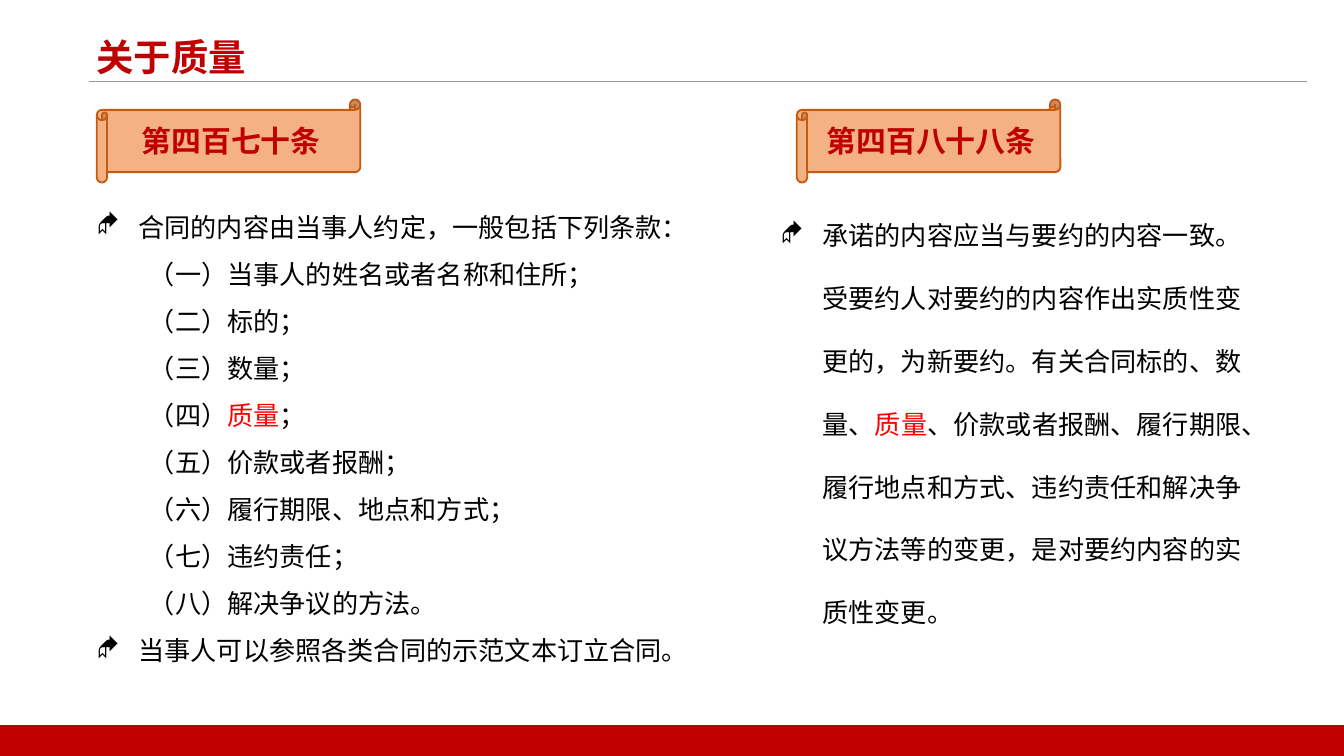
from lxml import etree
from pptx import Presentation
from pptx.dml.color import RGBColor
from pptx.enum import shapes, text
from pptx.oxml.ns import qn
from pptx.util import Cm, Pt

FONT = "Noto Sans CJK SC"
COLORS = {"bg": "FFFFFF", "rule": "999999", "brand": "C00000", "scroll": "F4B183",
          "scroll_line": "C55A11", "body": "000000", "key": "FF0000"}
TITLE = "关于质量"
KEYWORD = "质量"

# Articles: heading, scroll left, body box (left, top, width, height), line spacing,
# and paragraphs as (bulleted, text)
ARTICLES = [
    ("第四百七十条", 1.83, (1.57, 3.56, 12.7, 9.09), 1.5, [
        (True, "合同的内容由当事人约定，一般包括下列条款："),
        (False, "（一）当事人的姓名或者名称和住所；"),
        (False, "（二）标的；"),
        (False, "（三）数量；"),
        (False, "（四）质量；"),
        (False, "（五）价款或者报酬；"),
        (False, "（六）履行期限、地点和方式；"),
        (False, "（七）违约责任；"),
        (False, "（八）解决争议的方法。"),
        (True, "当事人可以参照各类合同的示范文本订立合同。"),
    ]),
    ("第四百八十八条", 15.06, (14.5, 3.43, 9.68, 8.46), 2.0, [
        (True, "承诺的内容应当与要约的内容一致。受要约人对要约的内容作出实质性变更的，"
               "为新要约。有关合同标的、数量、质量、价款或者报酬、履行期限、履行地点和方式、"
               "违约责任和解决争议方法等的变更，是对要约内容的实质性变更。"),
    ]),
]


def rgb(name):
    return RGBColor.from_string(COLORS[name])


def style(r, size, color, bold=False):
    r.font.size, r.font.bold, r.font.name = Pt(size), bold, FONT
    r.font.color.rgb = rgb(color)
    ea = etree.Element(qn("a:ea"), typeface=FONT)
    r.font._element.find(qn("a:latin")).addnext(ea)


def place(sp, left, top, width, height):
    sp.left, sp.top, sp.width, sp.height = Cm(left), Cm(top), Cm(width), Cm(height)


def add_box(s, kind, box, fill, line=None):
    sp = s.shapes.add_shape(kind, *map(Cm, box))
    sp.shadow.inherit = False
    sp.fill.solid()
    sp.fill.fore_color.rgb = rgb(fill)
    if line:
        sp.line.color.rgb = rgb(line)
        sp.line.width = Pt(1)
    else:
        sp.line.fill.background()
    return sp


def set_bullet(p, bulleted):
    """Diamond with a hanging indent, or a plain paragraph set in by two characters."""
    pPr = p._p.get_or_add_pPr()
    pPr.set("marL", str(Cm(0.79 if bulleted else 0.99)))
    pPr.set("indent", str(Cm(-0.79 if bulleted else 0)))
    if bulleted:
        etree.SubElement(pPr, qn("a:buFont"), typeface="Wingdings")
        etree.SubElement(pPr, qn("a:buChar"), char="◆")
    else:
        etree.SubElement(pPr, qn("a:buNone"))


def fill_body(sp, box, spacing, paragraphs):
    place(sp, *box)
    tf = sp.text_frame
    tf.word_wrap, tf.auto_size = True, text.MSO_AUTO_SIZE.NONE
    for i, (bulleted, content) in enumerate(paragraphs):
        p = tf.add_paragraph() if i else tf.paragraphs[0]
        set_bullet(p, bulleted)
        p.line_spacing, p.space_before = spacing, Pt(0)
        for part in content.partition(KEYWORD):
            if part:
                r = p.add_run()
                r.text = part
                style(r, 14, "key" if part == KEYWORD else "body")


def add_scroll(s, left, heading):
    sp = add_box(s, shapes.MSO_SHAPE.HORIZONTAL_SCROLL, (left, 1.88, 4.98, 1.57),
                 "scroll", "scroll_line")
    tf = sp.text_frame
    tf.text = heading
    tf.vertical_anchor = text.MSO_ANCHOR.MIDDLE
    p = tf.paragraphs[0]
    p.alignment = text.PP_ALIGN.CENTER
    style(p.runs[0], 16, "brand", True)


def main():
    prs = Presentation()
    prs.slide_width, prs.slide_height = Cm(25.4), Cm(14.28)
    s = prs.slides.add_slide(prs.slide_layouts.get_by_name("Two Content"))
    s.background.fill.solid()
    s.background.fill.fore_color.rgb = rgb("bg")
    title, *bodies = [sp for sp in s.placeholders if sp.placeholder_format.idx < 3]

    place(title, 1.57, 0.51, 8.26, 1.3)
    tf = title.text_frame
    tf.text = TITLE
    tf.vertical_anchor, tf.auto_size = text.MSO_ANCHOR.TOP, text.MSO_AUTO_SIZE.NONE
    tf.paragraphs[0].alignment = text.PP_ALIGN.LEFT
    style(tf.paragraphs[0].runs[0], 20, "brand", True)

    rule = s.shapes.add_connector(shapes.MSO_CONNECTOR.STRAIGHT,
                                  Cm(1.68), Cm(1.54), Cm(24.71), Cm(1.54))
    rule.line.color.rgb = rgb("rule")
    rule.line.width = Pt(0.5)
    etree.SubElement(rule._element.spPr, qn("a:effectLst"))

    add_box(s, shapes.MSO_SHAPE.RECTANGLE, (0, 13.7, 25.4, 0.58), "brand")
    for sp, (heading, left, box, spacing, paragraphs) in zip(bodies, ARTICLES):
        add_scroll(s, left, heading)
        fill_body(sp, box, spacing, paragraphs)

    prs.save("out.pptx")


if __name__ == "__main__":
    main()
